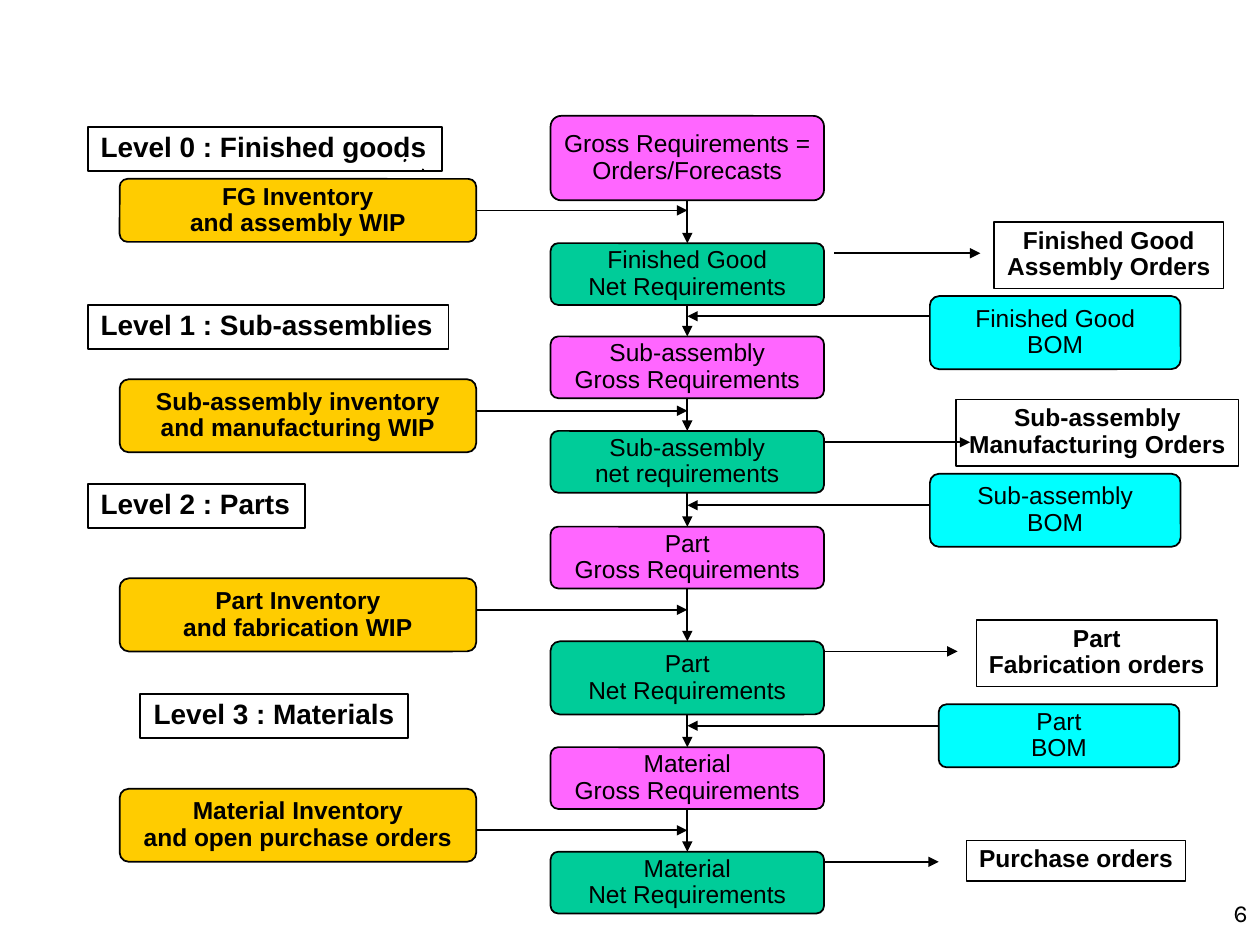
import copy

import pptx
import pptx.dml.color
import pptx.enum.shapes
import pptx.enum.text
import pptx.oxml
import pptx.oxml.ns
import pptx.util

Inches = pptx.util.Inches
Pt = pptx.util.Pt
RGBColor = pptx.dml.color.RGBColor
SHAPE = pptx.enum.shapes.MSO_SHAPE
ALIGN = pptx.enum.text.PP_ALIGN
ANCHOR = pptx.enum.text.MSO_ANCHOR
FIT = pptx.enum.text.MSO_AUTO_SIZE

BLACK = RGBColor(0x00, 0x00, 0x00)
PINK = RGBColor(0xFF, 0x66, 0xFF)
GREEN = RGBColor(0x00, 0xCC, 0x99)
GOLD = RGBColor(0xFF, 0xCC, 0x00)
CYAN = RGBColor(0x00, 0xFF, 0xFF)

LEFT, WIDTH = 4.37, 2.17
MID = LEFT + WIDTH / 2
EDGE = 3.78
BOTTOM, TOP, RIGHT = 2, 0, 3

# Main column: top, height, fill, text (\n new paragraph, \v line break)
STEPS = [
    (0.92, 0.67, PINK, "Gross Requirements =\nOrders/Forecasts"),
    (1.93, 0.49, GREEN, "Finished Good\vNet Requirements"),
    (2.67, 0.49, PINK, "Sub-assembly\vGross Requirements"),
    (3.42, 0.49, GREEN, "Sub-assembly\vnet requirements"),
    (4.18, 0.49, PINK, "Part\vGross Requirements"),
    (5.09, 0.58, GREEN, "Part\vNet Requirements"),
    (5.93, 0.49, PINK, "Material\vGross Requirements"),
    (6.76, 0.49, GREEN, "Material\vNet Requirements"),
]

# Inventories: top, height, arrow height, text
STOCKS = [
    (1.42, 0.5, 1.67, "FG Inventory\nand assembly WIP"),
    (3.01, 0.58, 3.26, "Sub-assembly inventory\nand manufacturing WIP"),
    (4.59, 0.58, 4.84, "Part Inventory\nand fabrication WIP"),
    (6.26, 0.58, 6.59, "Material Inventory\nand open purchase orders"),
]

# Bills of material: left, top, width, height, arrow height, text
BOMS = [
    (7.38, 2.35, 1.99, 0.58, 2.51, "Finished Good\vBOM"),
    (7.38, 3.76, 1.99, 0.58, 4.01, "Sub-assembly\vBOM"),
    (7.45, 5.59, 1.91, 0.5, 5.76, "Part\vBOM"),
]

# Orders: left, top, width, height, text, arrow start, arrow end, arrow height
ORDERS = [
    (7.89, 1.76, 1.82, 0.53, "Finished Good\vAssembly Orders", 6.62, 7.78, 2.01),
    (7.59, 3.17, 2.24, 0.53, "Sub-assembly\vManufacturing Orders", 6.53, 7.7, 3.51),
    (7.75, 4.92, 1.91, 0.53, "Part\vFabrication orders", 6.53, 7.6, 5.17),
    (7.67, 6.67, 1.74, 0.32, "Purchase orders", 6.53, 7.45, 6.84),
]

# Levels: left, top, width, text, alignment
LEVELS = [
    (0.7, 1.01, 2.81, "Level 0 : Finished goods", ALIGN.LEFT),
    (0.7, 2.42, 2.86, "Level 1 : Sub-assemblies", ALIGN.LEFT),
    (0.7, 3.84, 1.72, "Level 2 : Parts", ALIGN.LEFT),
    (1.11, 5.51, 2.13, "Level 3 : Materials", ALIGN.CENTER),
]


def write(frame, text, size=14, bold=False, font="Arial", align=ALIGN.CENTER,
          space=0.9):
    frame.text = text
    for para in frame.paragraphs:
        para.alignment = align
        para.line_spacing = space
        for run in para.runs:
            run.font.size = Pt(size)
            run.font.bold = bold
            run.font.name = font
            run.font.color.rgb = BLACK
        # A line break needs the run's format to keep its line height
        for brk in para._p.findall(pptx.oxml.ns.qn("a:br")):
            brk.insert(0, copy.deepcopy(para.runs[0]._r.rPr))


def ink(line):
    line.color.rgb = BLACK
    line.width = Pt(1)


def block(slide, kind, left, top, width, height, text, **form):
    shape = slide.shapes.add_shape(
        kind, Inches(left), Inches(top), Inches(width), Inches(height))
    shape.shadow.inherit = False
    ink(shape.line)
    shape.text_frame.word_wrap = False
    write(shape.text_frame, text, **form)
    return shape


def card(slide, left, top, width, height, fill, text, **form):
    """Add a filled rounded box."""
    shape = block(slide, SHAPE.ROUNDED_RECTANGLE, left, top, width, height,
                  text, **form)
    shape.adjustments[0] = 0.125
    shape.fill.solid()
    shape.fill.fore_color.rgb = fill
    shape.text_frame.vertical_anchor = ANCHOR.MIDDLE
    return shape


def label(slide, left, top, width, height, text, **form):
    """Add an unfilled, bold box that fits its text."""
    shape = block(slide, SHAPE.RECTANGLE, left, top, width, height, text,
                  bold=True, **form)
    shape.fill.background()
    shape.text_frame.vertical_anchor = ANCHOR.TOP
    shape.text_frame.auto_size = FIT.SHAPE_TO_FIT_TEXT
    return shape


def rule(slide, x1, y1, x2, y2, head=True):
    """Add a straight line, with an arrowhead at its end if head is set."""
    link = slide.shapes.add_connector(
        pptx.enum.shapes.MSO_CONNECTOR.STRAIGHT,
        Inches(x1), Inches(y1), Inches(x2), Inches(y2))
    ink(link.line)
    props = link._element.spPr
    if head:
        tail = pptx.oxml.ns.qn("a:tailEnd")
        props.find(pptx.oxml.ns.qn("a:ln")).makeelement(tail)
        pptx.oxml.xmlchemy.OxmlElement("a:tailEnd")
        end = pptx.oxml.xmlchemy.OxmlElement("a:tailEnd")
        end.set("type", "triangle")
        props.find(pptx.oxml.ns.qn("a:ln")).append(end)
    props.append(pptx.oxml.xmlchemy.OxmlElement("a:effectLst"))
    return link


def specks(slide):
    """Add the two small marks beside the first level."""
    x, y = Inches(3.21), Inches(1.27)
    pen = slide.shapes.build_freeform(x, y)
    pen.add_line_segments([(x + Inches(0.01), y), (x, y + Inches(0.01))])
    mark = pen.convert_to_shape()
    mark.shadow.inherit = False
    mark.fill.background()
    ink(mark.line)
    rule(slide, 3.35, 1.36, 3.36, 1.34, head=False)


def column(slide):
    boxes = [card(slide, LEFT, top, WIDTH, height, fill, text)
             for top, height, fill, text in STEPS]
    for i, (upper, lower) in enumerate(zip(boxes, boxes[1:])):
        link = rule(slide, MID, STEPS[i][0] + STEPS[i][1],
                    MID, STEPS[i + 1][0])
        link.begin_connect(upper, BOTTOM)
        link.end_connect(lower, TOP)


def sides(slide):
    for top, height, y, text in STOCKS:
        box = card(slide, 0.95, top, EDGE - 0.95, height, GOLD, text, bold=True)
        link = rule(slide, EDGE, y, MID, y)
        if abs(top + height / 2 - y) < 0.01:
            link.begin_connect(box, RIGHT)
    for left, top, width, height, y, text in BOMS:
        card(slide, left, top, width, height, CYAN, text)
        rule(slide, left, y, MID, y)
    for left, top, width, height, text, start, end, y in ORDERS:
        label(slide, left, top, width, height, text)
        rule(slide, start, y, end, y)


def number(slide):
    box = slide.shapes.add_textbox(
        Inches(7.92), Inches(7.08), Inches(2.08), Inches(0.25))
    box.text_frame.word_wrap = True
    write(box.text_frame, "6", font="Karla", align=ALIGN.RIGHT, space=1.0)


def main():
    deck = pptx.Presentation()
    deck.slide_width, deck.slide_height = Inches(10), Inches(7.5)
    slide = deck.slides.add_slide(deck.slide_layouts[6])
    number(slide)
    specks(slide)
    for left, top, width, text, align in LEVELS:
        label(slide, left, top, width, 0.35, text, size=16, align=align)
    column(slide)
    sides(slide)
    deck.save("out.pptx")


if __name__ == "__main__":
    main()
